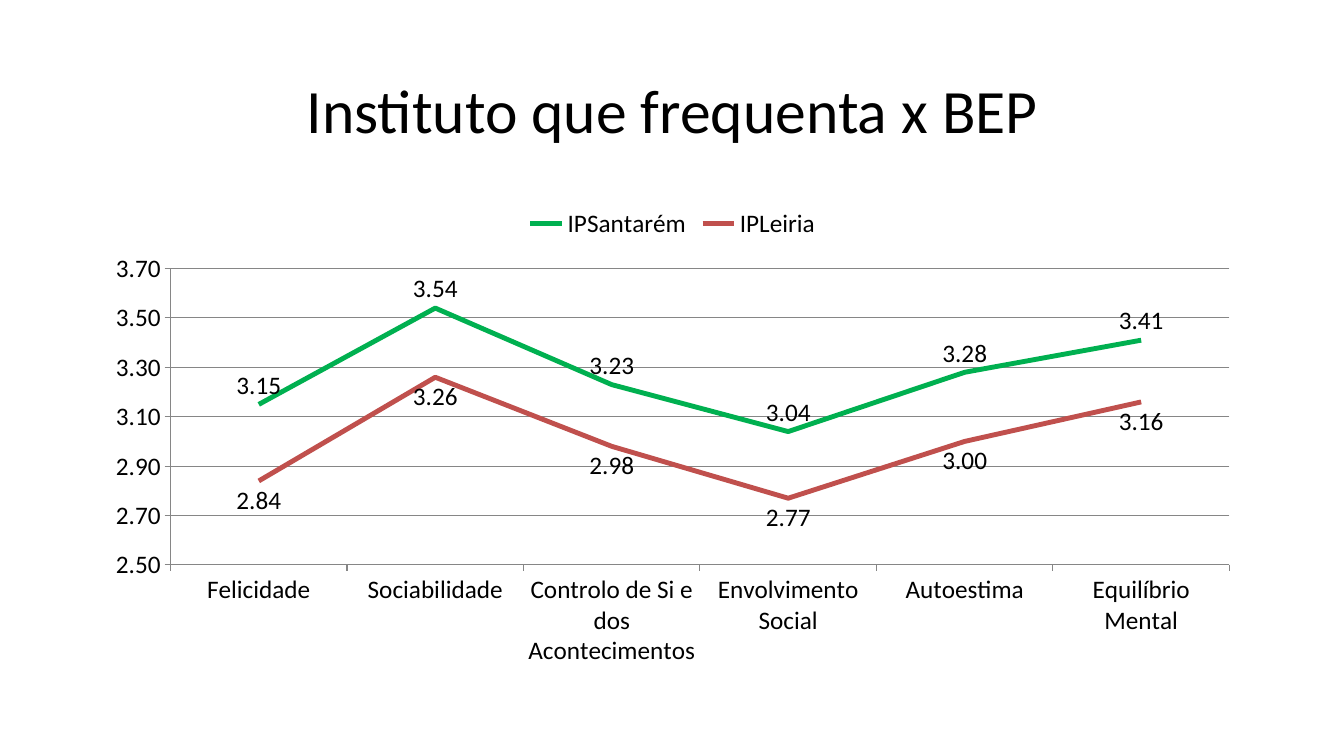
from dataclasses import dataclass

import pptx
import pptx.chart.data
import pptx.dml.color
import pptx.enum.chart
import pptx.enum.text
import pptx.util

WIDE, HIGH = 13.33, 7.5
LEFT, SPAN = 0.069, 0.863  # shares of the slide width
FONT = "Calibri"
BLACK, GREY = "000000", "868686"
FORMAT = "0.00"
SPOT = pptx.enum.chart.XL_LABEL_POSITION
TOPICS = ["Felicidade", "Sociabilidade", "Controlo de Si e dos Acontecimentos",
          "Envolvimento Social", "Autoestima", "Equilíbrio Mental"]


@dataclass
class Series:
    name: str
    means: list[float]
    color: str
    spot: SPOT


GROUPS = [
    Series("IPSantarém", [3.15, 3.54, 3.23, 3.04, 3.28, 3.41], "00B050", SPOT.ABOVE),
    Series("IPLeiria", [2.84, 3.26, 2.98, 2.77, 3.00, 3.16], "C0504D", SPOT.BELOW),
]


def paint(color: str) -> pptx.dml.color.RGBColor:
    return pptx.dml.color.RGBColor.from_string(color)


def place(top: float, height: float) -> list[int]:
    """Return the box of a full-width row, given as shares of the height."""
    return [pptx.util.Inches(size) for size in
            (LEFT * WIDE, top * HIGH, SPAN * WIDE, height * HIGH)]


def style(font, size: float, color: str = BLACK) -> None:
    font.name = FONT
    font.size = pptx.util.Pt(size)
    font.color.rgb = paint(color)


def rule(line, color: str, width: float) -> None:
    line.color.rgb = paint(color)
    line.width = pptx.util.Pt(width)


def write(slide, text: str, box: list[int], *, size: float, color: str = BLACK,
          space: float = 1.0) -> None:
    frame = slide.shapes.add_textbox(*box).text_frame
    frame.word_wrap = True
    frame.vertical_anchor = pptx.enum.text.MSO_ANCHOR.MIDDLE
    line = frame.paragraphs[0]
    line.alignment = pptx.enum.text.PP_ALIGN.CENTER
    line.line_spacing = space
    run = line.add_run()
    run.text = text
    style(run.font, size, color)


def plot(slide, box: list[int]) -> None:
    data = pptx.chart.data.CategoryChartData(number_format=FORMAT)
    data.categories = TOPICS
    for group in GROUPS:
        data.add_series(group.name, group.means)
    kind = pptx.enum.chart.XL_CHART_TYPE.LINE
    chart = slide.shapes.add_chart(kind, *box, data).chart
    style(chart.font, 18)
    chart.has_title = False
    chart.has_legend = True
    chart.legend.position = pptx.enum.chart.XL_LEGEND_POSITION.TOP
    chart.legend.include_in_layout = False
    chart.plots[0].vary_by_categories = False

    scale = chart.value_axis
    scale.minimum_scale, scale.maximum_scale, scale.major_unit = 2.5, 3.7, 0.2
    scale.has_major_gridlines = True
    scale.tick_labels.number_format = FORMAT
    scale.tick_labels.number_format_is_linked = False
    rule(scale.major_gridlines.format.line, GREY, 0.75)
    for axis in (scale, chart.category_axis):
        axis.major_tick_mark = pptx.enum.chart.XL_TICK_MARK.OUTSIDE
        rule(axis.format.line, GREY, 0.75)

    for group, series in zip(GROUPS, chart.plots[0].series):
        series.smooth = False
        series.marker.style = pptx.enum.chart.XL_MARKER_STYLE.NONE
        rule(series.format.line, group.color, 3.5)
        labels = series.data_labels
        labels.show_value = True
        labels.position = group.spot
        labels.number_format = FORMAT
        labels.number_format_is_linked = False
        style(labels.font, 18)


def main() -> None:
    deck = pptx.Presentation()
    deck.slide_width = pptx.util.Inches(WIDE)
    deck.slide_height = pptx.util.Inches(HIGH)
    slide = deck.slides.add_slide(deck.slide_layouts[6])
    write(slide, "Instituto que frequenta x BEP", place(0.053, 0.193), size=44, space=0.9)
    plot(slide, place(0.259, 0.635))
    deck.save("out.pptx")


if __name__ == "__main__":
    main()
